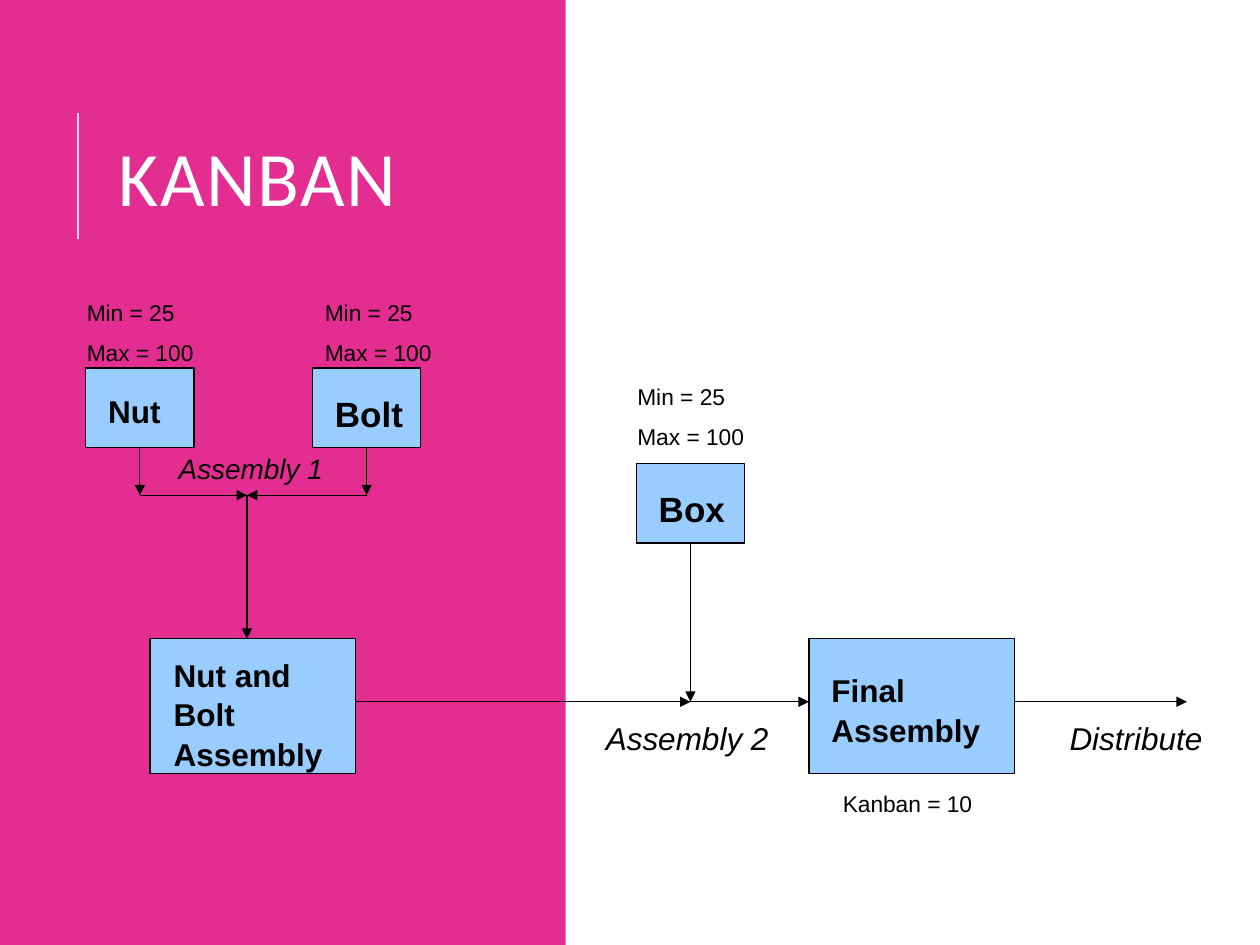
from lxml.etree import SubElement
from pptx import Presentation
from pptx.dml.color import RGBColor
from pptx.enum.shapes import MSO_CONNECTOR, MSO_SHAPE
from pptx.enum.text import MSO_ANCHOR, MSO_AUTO_SIZE, PP_ALIGN
from pptx.oxml.ns import qn
from pptx.util import Inches, Pt

THEME = {
    "panel": "E32D91", "accent": "F9D5E9", "box": "99CCFF",
    "ink": "000000", "white": "FFFFFF",
    "title_font": "Calibri", "body_font": "Arial",
    "title": 44, "large": 20, "normal": 18, "step": 16, "small": 13,
    "thin": 0.75, "rule": 1.5,
}

# Content: boxes as left, top, width, height
PART_SIZE, ASSEMBLY_SIZE = (0.86, 0.63), (1.63, 1.07)
BOXES = {
    "nut": (0.68, 2.92, *PART_SIZE),
    "bolt": (2.48, 2.92, *PART_SIZE),
    "box": (5.05, 3.68, *PART_SIZE),
    "nut_and_bolt": (1.19, 5.07, *ASSEMBLY_SIZE),
    "final": (6.42, 5.07, *ASSEMBLY_SIZE),
}
# Text, area, type size
BOX_NAMES = [
    ("Nut", (0.76, 3.05, 0.69, 0.4), "normal"),
    ("Bolt", (2.56, 3.05, 0.77, 0.44), "large"),
    ("Box", (5.13, 3.8, 0.77, 0.44), "large"),
    ("Nut and Bolt Assembly", (1.28, 5.14, 1.46, 1.01), "normal"),
    ("Final Assembly", (6.5, 5.26, 1.46, 0.71), "normal"),
]
STEP_NAMES = [
    ("Assembly 1", (1.32, 3.52, 1.46, 0.37), "step"),
    ("Assembly 2", (4.71, 5.64, 1.63, 0.4), "normal"),
    ("Distribute", (8.39, 5.64, 1.37, 0.4), "normal"),
]
STOCK_LIMITS = "Min = 25\nMax = 100"
STOCK_NOTES = [
    (STOCK_LIMITS, (0.59, 2.31, 1.11, 0.46), "small"),
    (STOCK_LIMITS, (2.48, 2.31, 1.11, 0.46), "small"),
    (STOCK_LIMITS, (4.96, 2.98, 1.11, 0.46), "small"),
    ("Kanban = 10", (6.59, 6.21, 1.29, 0.22), "small"),
]
JOIN_X, JOIN_Y = 1.96, 3.93
FLOW_Y, FLOW_END = 5.57, 9.42


def color(name):
    return RGBColor.from_string(THEME[name])


def write_text(frame, text, size="normal", font="body_font", ink="ink",
               bold=False, italic=False, line_spacing=1.05, space_before=0.5):
    frame.word_wrap = True
    for index, line in enumerate(text.split("\n")):
        paragraph = frame.paragraphs[0] if index == 0 else frame.add_paragraph()
        paragraph.alignment = PP_ALIGN.LEFT
        paragraph.line_spacing = line_spacing
        paragraph.space_before = Pt(THEME[size] * space_before)
        run = paragraph.add_run()
        run.text = line
        run.font.size = Pt(THEME[size])
        run.font.name = THEME[font]
        run.font.color.rgb = color(ink)
        run.font.bold = bold
        run.font.italic = italic


def add_label(shapes, text, area, size, **text_format):
    label = shapes.add_textbox(*map(Inches, area))
    write_text(label.text_frame, text, size=size, **text_format)
    label.text_frame.auto_size = MSO_AUTO_SIZE.SHAPE_TO_FIT_TEXT


def add_rectangle(shapes, area, fill, outline=None):
    shape = shapes.add_shape(MSO_SHAPE.RECTANGLE, *map(Inches, area))
    shape.shadow.inherit = False
    shape.fill.solid()
    shape.fill.fore_color.rgb = color(fill)
    if outline:
        shape.line.color.rgb = color(outline)
        shape.line.width = Pt(THEME["thin"])
    else:
        shape.line.fill.background()
    return shape


def add_line(shapes, start, end, ink="ink", width="thin", arrow=True):
    line = shapes.add_connector(MSO_CONNECTOR.STRAIGHT, *map(Inches, (*start, *end)))
    line.line.color.rgb = color(ink)
    line.line.width = Pt(THEME[width])
    if arrow:
        SubElement(line.line._get_or_add_ln(), qn("a:tailEnd"), type="triangle")
    SubElement(line._element.spPr, qn("a:effectLst"))


def bottom_center(name):
    left, top, width, height = BOXES[name]
    return round(left + width / 2, 2), top + height


def flow_arrows():
    for name in ("nut", "bolt"):
        x, bottom = bottom_center(name)
        yield (x, bottom), (x, JOIN_Y)
        yield (x, JOIN_Y), (JOIN_X, JOIN_Y)
    yield (JOIN_X, JOIN_Y), (JOIN_X, BOXES["nut_and_bolt"][1])
    box_x, box_bottom = bottom_center("box")
    yield (box_x, box_bottom), (box_x, FLOW_Y)
    final_left = BOXES["final"][0]
    sub_right = BOXES["nut_and_bolt"][0] + ASSEMBLY_SIZE[0]
    stops = [(sub_right, box_x), (box_x, final_left),
             (final_left + ASSEMBLY_SIZE[0], FLOW_END)]
    for start_x, end_x in stops:
        yield (start_x, FLOW_Y), (end_x, FLOW_Y)


def main():
    presentation = Presentation()
    presentation.slide_width, presentation.slide_height = Inches(10), Inches(7.5)
    slide = presentation.slides.add_slide(presentation.slide_layouts[5])

    # Side panel, placed behind the title
    panel = add_rectangle(slide.shapes, (0, 0, 4.49, 7.5), "panel")
    title = slide.shapes.title
    title._element.addprevious(panel._element)

    # Title and its rule
    title.left, title.top, title.width, title.height = map(
        Inches, (0.84, 0.64, 3.1, 1.64))
    write_text(title.text_frame, "KANBAN", size="title", font="title_font",
               ink="white", line_spacing=0.8, space_before=0)
    title.text_frame.vertical_anchor = MSO_ANCHOR.MIDDLE
    title.text_frame.auto_size = MSO_AUTO_SIZE.NONE
    title.text_frame.paragraphs[0].runs[0].font._element.set("spc", "100")
    add_line(slide.shapes, (0.62, 1.9), (0.62, 0.9), ink="accent",
             width="rule", arrow=False)

    # Flow diagram
    diagram = slide.shapes.add_group_shape().shapes
    for area in BOXES.values():
        add_rectangle(diagram, area, "box", outline="ink")
    for start, end in flow_arrows():
        add_line(diagram, start, end)

    # Diagram labels
    for label in BOX_NAMES:
        add_label(diagram, *label, bold=True)
    for label in STEP_NAMES:
        add_label(diagram, *label, italic=True)
    for label in STOCK_NOTES:
        add_label(diagram, *label)

    presentation.save("out.pptx")


if __name__ == "__main__":
    main()
